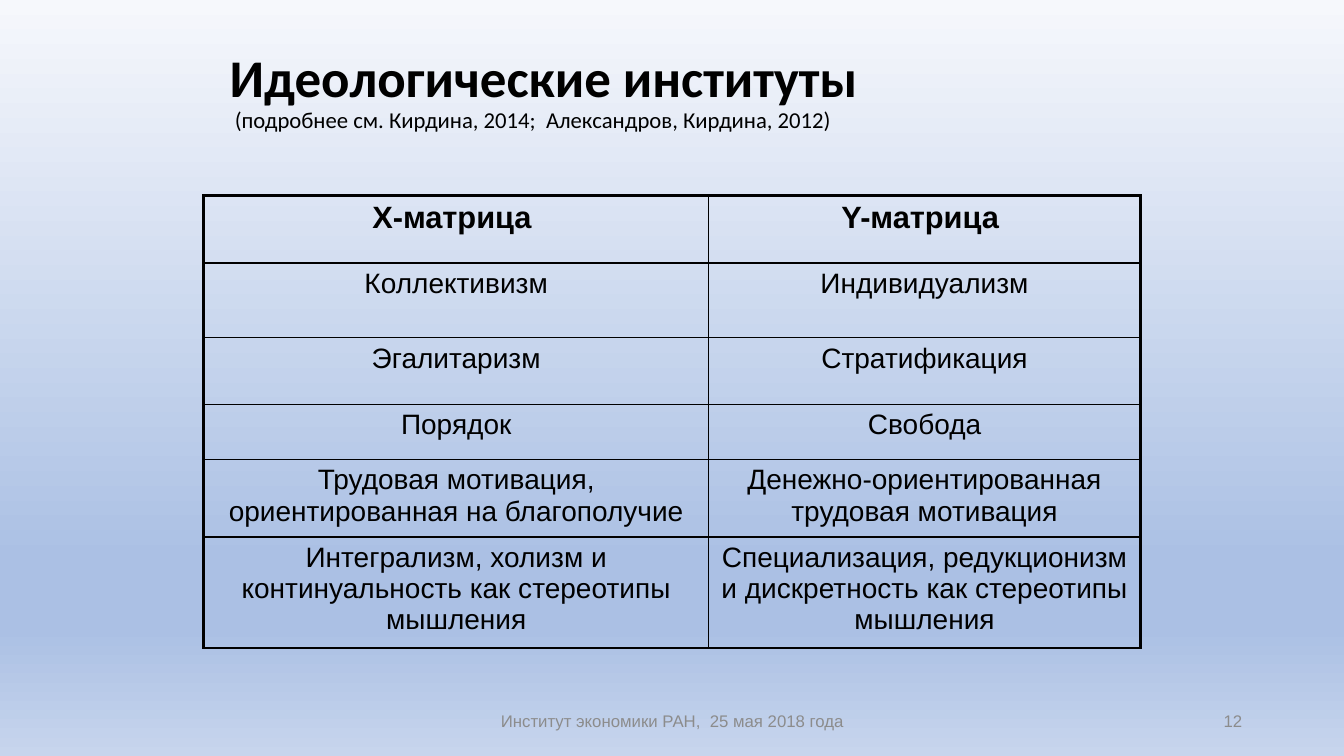
from lxml.etree import SubElement
from pptx import Presentation
from pptx.dml.color import RGBColor
from pptx.enum.text import MSO_ANCHOR, PP_ALIGN
from pptx.oxml.ns import qn
from pptx.util import Inches, Pt

BLACK, GREY = "000000", "8C8C8C"
STOPS = [(0, "F6F8FC"), (74, "ABC0E4"), (83, "ABC0E4"), (100, "C7D5ED")]
COLS = [5.01, 4.28]
HEIGHTS = [0.67, 0.74, 0.66, 0.55, 0.72, 1.03]
ROWS = [
    ("Х-матрица ", "Y-матрица "),
    ("Коллективизм", "Индивидуализм"),
    ("Эгалитаризм", "Стратификация"),
    ("Порядок", "Свобода"),
    ("Трудовая мотивация, ориентированная на благополучие",
     "Денежно-ориентированная трудовая мотивация"),
    ("Интегрализм, холизм и континуальность как стереотипы мышления",
     "Специализация, редукционизм и дискретность как стереотипы мышления"),
]


def color(text):
    return RGBColor.from_string(text)


def add_run(para, text, hue=BLACK, **form):
    run = para.add_run()
    run.text = text
    for key, value in form.items():
        setattr(run.font, key, value)
    run.font.color.rgb = color(hue)


def add_box(slide, box):
    """Add a wrapped, middle-anchored text box and return its paragraph."""
    frame = slide.shapes.add_textbox(*map(Inches, box)).text_frame
    frame.word_wrap = True
    frame.vertical_anchor = MSO_ANCHOR.MIDDLE
    return frame.paragraphs[0]


def paint_back(slide):
    fill = slide.background.fill
    fill.gradient()
    fill.gradient_angle = 270
    stops = next(slide.element.iter(qn("a:gsLst")))
    for stop in list(stops):
        stops.remove(stop)
    for place, hue in STOPS:
        stop = SubElement(stops, qn("a:gs"), pos=str(place * 1000))
        SubElement(stop, qn("a:srgbClr"), val=hue)


def add_title(slide, box):
    para = add_box(slide, box)
    para.line_spacing = 0.9
    add_run(para, "Идеологические институты",
            name="Calibri", size=Pt(37.8), bold=True)
    para.add_line_break()
    add_run(para, " (подробнее см. Кирдина, 2014;  Александров, Кирдина, 2012)",
            name="Calibri", size=Pt(16.2), bold=False)


def set_edges(cell, widths):
    """Draw cell borders from a dict of side letter to width in points."""
    props = cell._tc.get_or_add_tcPr()
    for spot, (side, width) in enumerate(widths.items()):
        line = SubElement(props, qn(f"a:ln{side}"), w=str(Pt(width)))
        fill = SubElement(line, qn("a:solidFill"))
        SubElement(fill, qn("a:srgbClr"), val=BLACK)
        props.insert(spot, line)


def add_grid(slide, box):
    table = slide.shapes.add_table(
        len(ROWS), len(COLS), *map(Inches, box)).table
    table.horz_banding = False
    for col, width in zip(table.columns, COLS):
        col.width = Inches(width)
    for row, height in zip(table.rows, HEIGHTS):
        row.height = Inches(height)
    for r, row in enumerate(ROWS):
        for c, text in enumerate(row):
            cell = table.cell(r, c)
            cell.fill.background()
            para = cell.text_frame.paragraphs[0]
            para.alignment = PP_ALIGN.CENTER
            add_run(para, text, name="Arial",
                    size=Pt(20 if r else 22), bold=r == 0)
            outer = {"L": c == 0, "R": c == len(COLS) - 1,
                     "T": r == 0, "B": r == len(ROWS) - 1}
            set_edges(cell, {side: 2.25 if edge else 1
                             for side, edge in outer.items()})


def add_foot(slide, box, text, align):
    para = add_box(slide, box)
    para.alignment = align
    add_run(para, text, GREY, name="Arial", size=Pt(12))


def main():
    deck = Presentation()
    deck.slide_width, deck.slide_height = Inches(13.33), Inches(7.5)
    slide = deck.slides.add_slide(deck.slide_layouts[6])
    paint_back(slide)
    add_title(slide, (2.18, 0.44, 9.17, 0.96))
    add_grid(slide, (2.02, 1.94, sum(COLS), sum(HEIGHTS)))
    add_foot(slide, (4.42, 6.95, 4.5, 0.4),
             "Институт экономики РАН,  25 мая 2018 года", PP_ALIGN.CENTER)
    add_foot(slide, (9.42, 6.95, 3, 0.4), "12", PP_ALIGN.RIGHT)
    deck.save("out.pptx")


if __name__ == "__main__":
    main()
